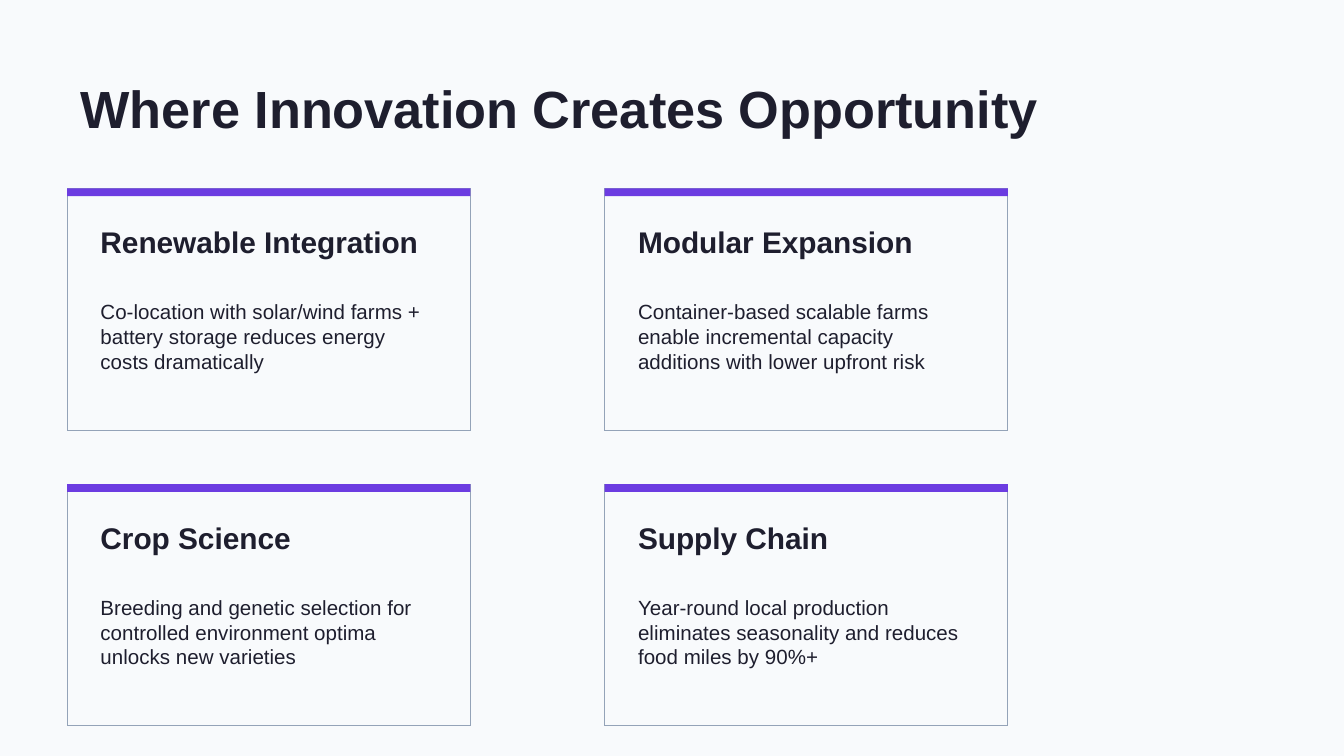
from pptx import Presentation
from pptx.dml.color import RGBColor
from pptx.enum.shapes import MSO_SHAPE
from pptx.enum.text import MSO_ANCHOR, MSO_AUTO_SIZE, PP_ALIGN
from pptx.util import Cm, Pt

# Content
TITLE = "Where Innovation Creates Opportunity"
CARDS = [
    ("Renewable Integration",
     "Co-location with solar/wind farms + battery storage reduces energy costs dramatically"),
    ("Modular Expansion",
     "Container-based scalable farms enable incremental capacity additions with lower upfront risk"),
    ("Crop Science",
     "Breeding and genetic selection for controlled environment optima unlocks new varieties"),
    ("Supply Chain",
     "Year-round local production eliminates seasonality and reduces food miles by 90%+"),
]

# Style
FONT = "Arial"
BACKGROUND = RGBColor(0xF8, 0xFA, 0xFC)
INK = RGBColor(0x1E, 0x1E, 0x2E)
ACCENT = RGBColor(0x6C, 0x3C, 0xE1)
BORDER = RGBColor(0x94, 0xA3, 0xB8)
RECTANGLE = MSO_SHAPE.RECTANGLE
MIDDLE = MSO_ANCHOR.MIDDLE
LEFT = PP_ALIGN.LEFT
NO_AUTOFIT = MSO_AUTO_SIZE.NONE

# Card grid
COLUMNS = 2
GRID_LEFT, GRID_TOP = Cm(1.27), Cm(3.56)
COLUMN_PITCH, ROW_PITCH = Cm(10.16), Cm(5.59)
CARD_WIDTH, CARD_HEIGHT = Cm(7.62), Cm(4.57)
BAR_HEIGHT = Cm(0.15)
PADDING = Cm(0.38)
TEXT_WIDTH = CARD_WIDTH - 2 * PADDING
HEADING_HEIGHT = Cm(1.27)
BODY_OFFSET, BODY_HEIGHT = Cm(1.27), Cm(3.05)


def write_text(shape, text, size, bold=False):
    frame = shape.text_frame
    frame.text = text
    frame.word_wrap = True
    frame.auto_size = NO_AUTOFIT
    frame.vertical_anchor = MIDDLE
    paragraph = frame.paragraphs[0]
    paragraph.alignment = LEFT
    paragraph.font.name = FONT
    paragraph.font.size = Pt(size)
    paragraph.font.bold = bold
    paragraph.font.color.rgb = INK


def add_rectangle(slide, left, top, width, height, fill, border=None):
    shape = slide.shapes.add_shape(RECTANGLE, left, top, width, height)
    shape.shadow.inherit = False
    shape.fill.solid()
    shape.fill.fore_color.rgb = fill
    if border is None:
        shape.line.fill.background()
    else:
        shape.line.color.rgb = border
        shape.line.width = Pt(0.01)


def add_card(slide, left, top, heading, body):
    add_rectangle(slide, left, top, CARD_WIDTH, CARD_HEIGHT, BACKGROUND, BORDER)
    add_rectangle(slide, left, top, CARD_WIDTH, BAR_HEIGHT, ACCENT)
    text_left = left + PADDING
    heading_box = slide.shapes.add_textbox(
        text_left, top + PADDING, TEXT_WIDTH, HEADING_HEIGHT)
    write_text(heading_box, heading, 16, bold=True)
    body_box = slide.shapes.add_textbox(
        text_left, top + BODY_OFFSET, TEXT_WIDTH, BODY_HEIGHT)
    write_text(body_box, body, 11)


def main():
    presentation = Presentation()
    presentation.slide_width, presentation.slide_height = Cm(25.4), Cm(14.29)
    slide = presentation.slides.add_slide(presentation.slide_layouts[5])
    slide.background.fill.solid()
    slide.background.fill.fore_color.rgb = BACKGROUND

    # Title
    title = slide.shapes.title
    title.left, title.top = GRID_LEFT, Cm(0.76)
    title.width, title.height = Cm(22.86), Cm(2.54)
    write_text(title, TITLE, 28, bold=True)

    # Cards
    for index, (heading, body) in enumerate(CARDS):
        row, column = divmod(index, COLUMNS)
        add_card(slide, GRID_LEFT + column * COLUMN_PITCH,
                 GRID_TOP + row * ROW_PITCH, heading, body)

    presentation.save("out.pptx")


if __name__ == "__main__":
    main()
